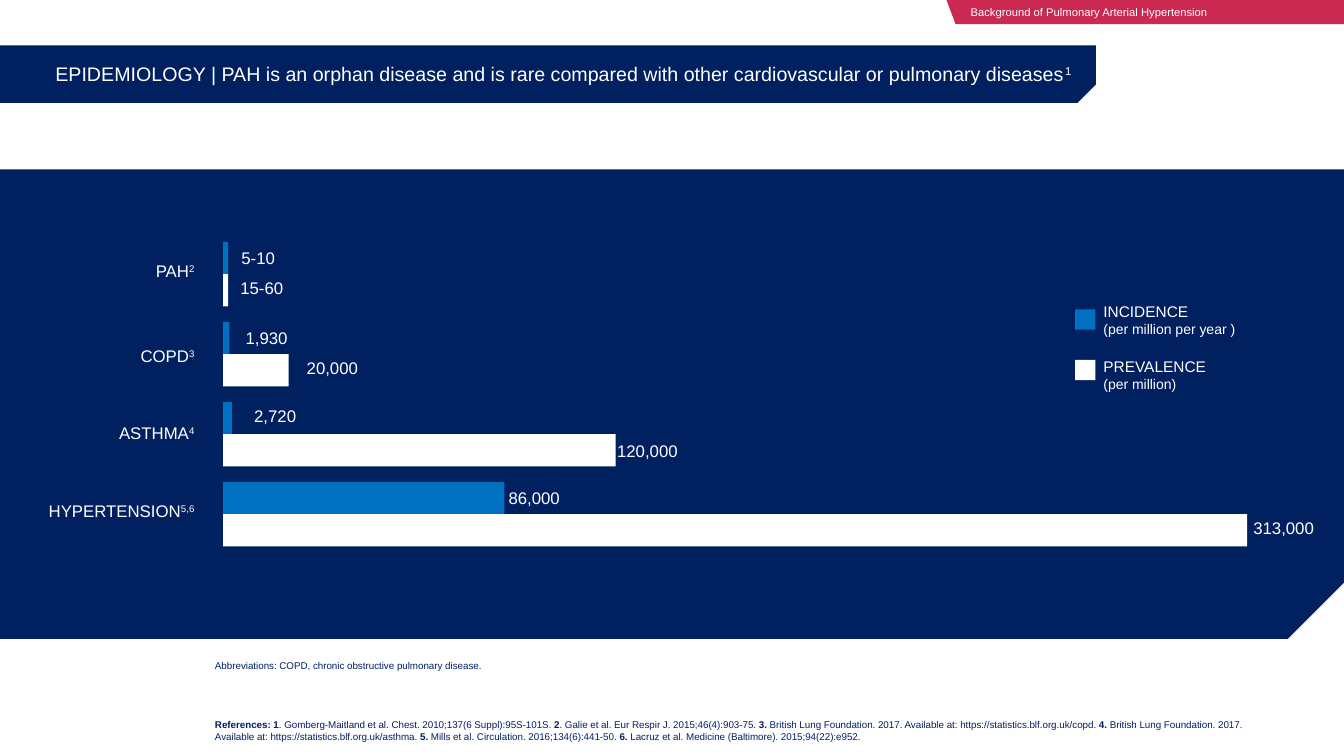
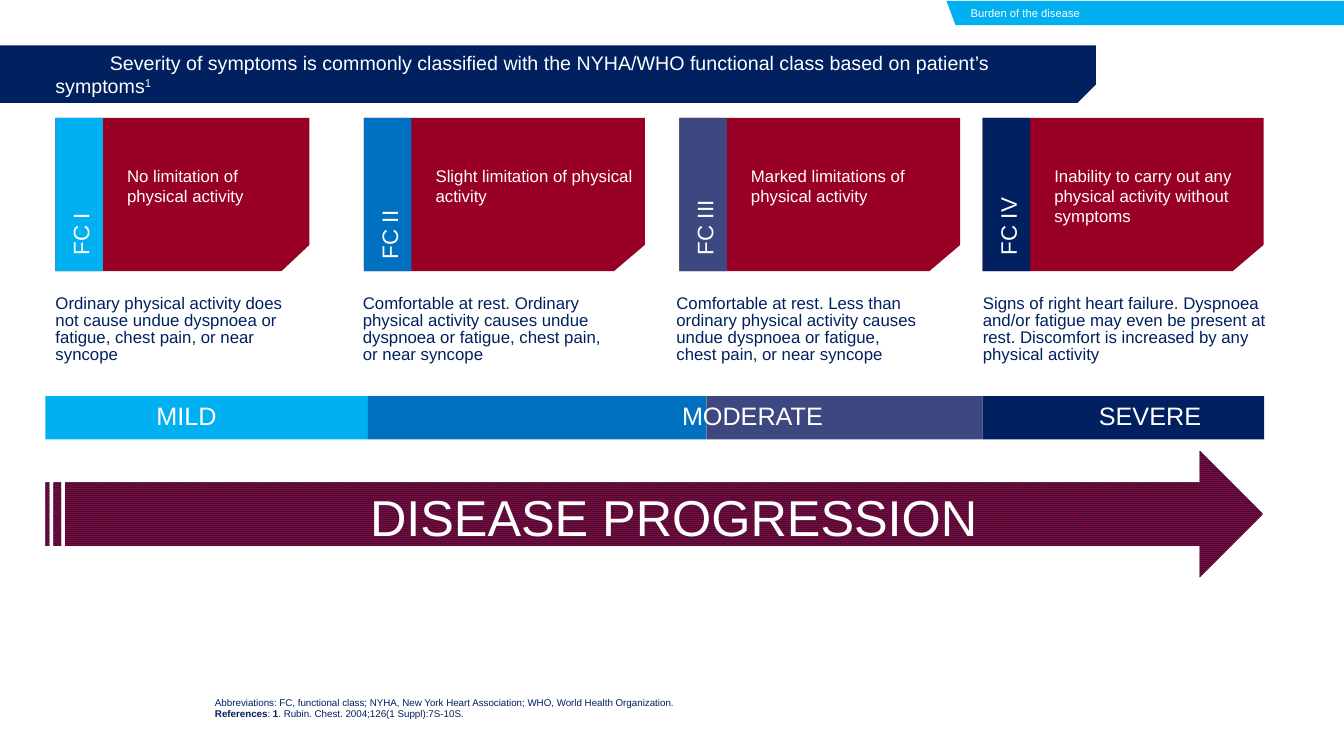
from itertools import pairwise

from pptx import Presentation, util as u
from pptx.dml.color import RGBColor
from pptx.enum import dml, shapes, text

SLIDE_W, SLIDE_H = u.Inches(13.33), u.Inches(7.5)
COLORS = {
    "navy": "002060", "white": "FFFFFF", "blue": "0070C0", "cyan": "00B0F0",
    "slate": "3D4880", "crimson": "990026", "pink": "CB2952",
}
FONT = "Arial"
NO_INSETS = (0, 0, 0, 0)
INSETS = (0.75, 0.67, 0.75, 0.67)
MIDDLE, BOTTOM = text.MSO_ANCHOR.MIDDLE, text.MSO_ANCHOR.BOTTOM
CENTER, RIGHT = text.PP_ALIGN.CENTER, text.PP_ALIGN.RIGHT
SUPERSCRIPT = {"superscript": True}

# Bar chart, in columns and rows
AXIS, FIRST_ROW, ROW_PITCH, BAR_H = 16.6, 32, 10.58, 4.27
LONGEST_BAR, LONGEST_VALUE, SHORTEST_BAR = 76.2, 313000, 0.38

# Disease, citation, label shift, then label, value and label offset of each bar
DISEASES = [
    ("PAH", "2", 0, [("5-10", 10, 0.98, 0), ("15-60", 60, 0.9, -0.4)]),
    ("COPD", "3", 0.67, [("1,930", 1930, 1.2, 0), ("20,000", 20000, 1.35, -0.3)]),
    ("ASTHMA", "4", 0.27, [("2,720", 2720, 1.65, -0.3), ("120,000", 120000, 0.1, 0.1)]),
    ("HYPERTENSION", "5,6", 0, [("86,000", 86000, 0.3, 0), ("313,000", 313000, 0.45, -0.3)]),
]
MEASURES = [
    ("INCIDENCE", "(per million per year )", "blue", 40.93, 0),
    ("PREVALENCE", "(per million)", "white", 47.6, 0.6),
]

# Class, colour, left, width, label drop, limitation, symptoms, their left and width
CLASSES = [
    ("FC I", "cyan", 4.12, 18.9, 0, "No limitation of\nphysical activity",
     "Ordinary physical activity does not cause undue dyspnoea or fatigue, "
     "chest pain, or near syncope", 3.38, 19.42),
    ("FC II", "blue", 27.08, 20.9, 0.53, "Slight limitation of physical activity",
     "Comfortable at rest. Ordinary physical activity causes undue dyspnoea or "
     "fatigue, chest pain, or near syncope", 26.25, 19.6),
    ("FC III", "slate", 50.55, 20.9, 0, "Marked limitations of physical activity",
     "Comfortable at rest. Less than ordinary physical activity causes undue "
     "dyspnoea or fatigue, chest pain, or near syncope", 49.58, 19.9),
    ("FC IV", "navy", 73.12, 20.9, 0,
     "Inability to carry out any physical activity without symptoms",
     "Signs of right heart failure. Dyspnoea and/or fatigue may even be present "
     "at rest. Discomfort is increased by any physical activity", 72.38, 22.7),
]
SEVERITY_EDGES = [3.38, 27.38, 52.55, 73.12, 94.05]
SEVERITY_CENTERS = [("MILD", 13.88), ("MODERATE", 55.99), ("SEVERE", 85.57)]


def col(n):
    """Length of n columns, each a hundredth of the slide's width."""
    return round(SLIDE_W * n / 100)


def row(n):
    """Length of n rows, each a hundredth of the slide's height."""
    return round(SLIDE_H * n / 100)


def place(box):
    left, top, width, height = box
    return col(left), row(top), col(width), row(height)


def rgb(color):
    return RGBColor.from_string(COLORS[color])


def paint(shape, color):
    shape.shadow.inherit = False
    shape.fill.solid()
    shape.fill.fore_color.rgb = rgb(color)
    shape.line.fill.background()
    return shape


def write(shape, paragraphs, size, color="white", anchor=text.MSO_ANCHOR.TOP,
          insets=INSETS, **paragraph_format):
    """Fill a shape with paragraphs, each a list of (words, font format) runs."""
    frame = shape.text_frame
    left, top, right, bottom = insets
    frame_format = {
        "word_wrap": True, "vertical_anchor": anchor,
        "margin_left": col(left), "margin_top": row(top),
        "margin_right": col(right), "margin_bottom": row(bottom),
    }
    for name, value in frame_format.items():
        setattr(frame, name, value)
    for index, runs in enumerate(paragraphs):
        paragraph = frame.add_paragraph() if index else frame.paragraphs[0]
        for name, value in ({"alignment": text.PP_ALIGN.LEFT} | paragraph_format).items():
            setattr(paragraph, name, value)
        for words, font_format in runs:
            run = paragraph.add_run()
            run.text = words
            run.font.color.rgb = rgb(color)
            for name, value in ({"name": FONT, "size": u.Pt(size)} | font_format).items():
                if name == "superscript":
                    run.font._element.set("baseline", "30000")
                else:
                    setattr(run.font, name, value)
    return shape


def add_text(slide, box, paragraphs, size, **options):
    return write(slide.shapes.add_textbox(*place(box)), paragraphs, size, **options)


def add_block(slide, box, color, preset=shapes.MSO_SHAPE.RECTANGLE):
    return paint(slide.shapes.add_shape(preset, *place(box)), color)


def add_outline(slide, points, color):
    corners = [(col(x), row(y)) for x, y in points]
    builder = slide.shapes.build_freeform(*corners[0], scale=1.0)
    builder.add_line_segments(corners[1:], close=True)
    return paint(builder.convert_to_shape(), color)


def add_cut_block(slide, box, cut_w, cut_h, color):
    """Rectangle with its bottom right corner cut off."""
    left, top, width, height = box
    right, bottom = left + width, top + height
    return add_outline(slide, [
        (left, top), (right, top), (right, bottom - cut_h),
        (right - cut_w, bottom), (left, bottom)], color)


def add_section_tag(slide, section, color, top=0):
    bottom = top + 3.2
    tag = add_outline(slide, [(70.42, top), (100, top), (100, bottom), (71.1, bottom)], color)
    write(tag, [[(section, {})]], 8, anchor=MIDDLE, insets=(1.8, 0.67, 0.75, 0.67))


def add_title(slide, title, first_indent=0):
    band = add_cut_block(slide, (0, 6, 81.53, 7.6), 1.35, 2.4, "navy")
    write(band, [[(title, {}), ("1", SUPERSCRIPT)]], 14,
          anchor=MIDDLE, insets=(4.12, 0.67, 1.4, 0.67))
    band.text_frame.paragraphs[0]._p.get_or_add_pPr().set("indent", str(col(first_indent)))


def add_footnote(slide, bottom, runs):
    height = 4.5
    add_text(slide, (16, bottom - height, 78.15, height), [runs], 7, color="navy",
             anchor=BOTTOM, insets=NO_INSETS, space_after=u.Pt(6))


def bold_by_turns(*parts):
    return [(part, {"bold": index % 2 == 0}) for index, part in enumerate(parts)]


def add_bar(slide, top, color, label, value, label_gap, label_shift):
    length = max(SHORTEST_BAR, LONGEST_BAR * value / LONGEST_VALUE)
    add_block(slide, (AXIS, top, length, BAR_H), color)
    add_text(slide, (AXIS + length + label_gap, top + label_shift, 6.6, BAR_H),
             [[(label, {})]], 12, anchor=MIDDLE, insets=NO_INSETS)


def add_legend_entry(slide, measure, unit, color, top, text_shift):
    side = 2.67
    add_block(slide, (80, top, 1.5, side), color)
    add_text(slide, (81.5, top + text_shift, 11.6, side),
             [[(measure, {})], [(unit, {"size": u.Pt(10)})]], 11,
             anchor=MIDDLE, insets=(0.6, 0, 0, 0))


def add_class(slide, name, color, left, width, drop, limitation, symptoms,
              symptoms_left, symptoms_width):
    top, height, strip_w = 15.6, 20.27, 3.53
    card = add_cut_block(slide, (left, top, width, height), 0.11 * width, 3.47, "crimson")
    write(card, [[(line, {})] for line in limitation.split("\n")], 12,
          insets=(5.33, 6.27, 0.6, 0.67))
    add_block(slide, (left, top, strip_w, height), color)
    label_w, label_h = 11.4, 5.33
    label = add_text(
        slide, (left + (strip_w - label_w) / 2, top + (height - label_h) / 2 + drop,
                label_w, label_h),
        [[(name, {})]], 16, insets=(1.2, 1.07, 0.75, 0.67))
    label.rotation = 270
    add_text(slide, (symptoms_left, 38.53, symptoms_width, 10.67), [[(symptoms, {})]], 12,
             color="navy", line_spacing=u.Pt(12), space_after=u.Pt(6))


def add_centered_text(slide, words, center, top, width, height, size):
    add_text(slide, (center - width / 2, top, width, height), [[(words, {})]], size,
             insets=NO_INSETS, alignment=CENTER)


def build_epidemiology(slide):
    panel = add_block(slide, (0, 22.4, 100, 62.13), "navy",
                      shapes.MSO_SHAPE.SNIP_1_RECTANGLE)
    panel.adjustments[0] = 0.12
    panel._element.spPr.xfrm.set("flipV", "1")
    add_section_tag(slide, "Background of Pulmonary Arterial Hypertension", "pink")
    add_title(slide, "EPIDEMIOLOGY | PAH is an orphan disease and is rare compared "
                     "with other cardiovascular or pulmonary diseases")
    for index, (disease, citation, shift, bars) in enumerate(DISEASES):
        top = FIRST_ROW + index * ROW_PITCH
        add_text(slide, (1.72, top + shift, 13.5, 7.73),
                 [[(disease, {}), (citation, SUPERSCRIPT)]], 12,
                 anchor=MIDDLE, alignment=RIGHT)
        for place_in_row, (bar, color) in enumerate(zip(bars, ("blue", "white"))):
            add_bar(slide, top + place_in_row * BAR_H, color, *bar)
    for measure in MEASURES:
        add_legend_entry(slide, *measure)
    add_footnote(slide, 88.8, [
        ("Abbreviations: COPD, chronic obstructive pulmonary disease.", {})])
    add_footnote(slide, 98.17, bold_by_turns(
        "References: 1", ". Gomberg-Maitland et al. Chest. 2010;137(6 Suppl):95S-101S.",
        " 2", ". Galie et al. Eur Respir J. 2015;46(4):903-75. ",
        "3.", " British Lung Foundation. 2017. Available at: "
              "https://statistics.blf.org.uk/copd. ",
        "4.", " British Lung Foundation. 2017. Available at: "
              "https://statistics.blf.org.uk/asthma. ",
        "5.", " Mills et al. Circulation. 2016;134(6):441-50. ",
        "6.", " Lacruz et al. Medicine (Baltimore). 2015;94(22):e952."))


def build_severity(slide):
    add_section_tag(slide, "Burden of the disease", "cyan", top=0.13)
    add_title(slide, "Severity of symptoms is commonly classified with the NYHA/WHO "
                     "functional class based on patient’s symptoms", first_indent=4.05)
    for functional_class in CLASSES:
        add_class(slide, *functional_class)
    for (left, right), (_, color, *_) in zip(pairwise(SEVERITY_EDGES), CLASSES):
        add_block(slide, (left, 52.4, right - left, 5.73), color)
    for severity, center in SEVERITY_CENTERS:
        add_centered_text(slide, severity, center, 52.93, 14, 4.53, 18)
    arrow = add_block(slide, (3.38, 59.6, 90.6, 16.8), "crimson",
                      shapes.MSO_SHAPE.STRIPED_RIGHT_ARROW)
    arrow.fill.patterned()
    arrow.fill.pattern = dml.MSO_PATTERN.PERCENT_90
    arrow.fill.fore_color.rgb = rgb("crimson")
    arrow.fill.back_color.rgb = rgb("navy")
    add_centered_text(slide, "DISEASE PROGRESSION", 50.15, 64.27, 71.6, 5.87, 36)
    add_footnote(slide, 93.73, [
        ("Abbreviations: FC, functional class; NYHA, New York Heart Association; "
         "WHO, World Health Organization.", {})])
    add_footnote(slide, 95.2, bold_by_turns(
        "References", ": ", "1", ". Rubin. Chest. 2004;126(1 Suppl):7S-10S."))


def main():
    deck = Presentation()
    deck.slide_width, deck.slide_height = SLIDE_W, SLIDE_H
    blank = deck.slide_layouts[6]
    for build in (build_epidemiology, build_severity):
        build(deck.slides.add_slide(blank))
    deck.save("out.pptx")


if __name__ == "__main__":
    main()
